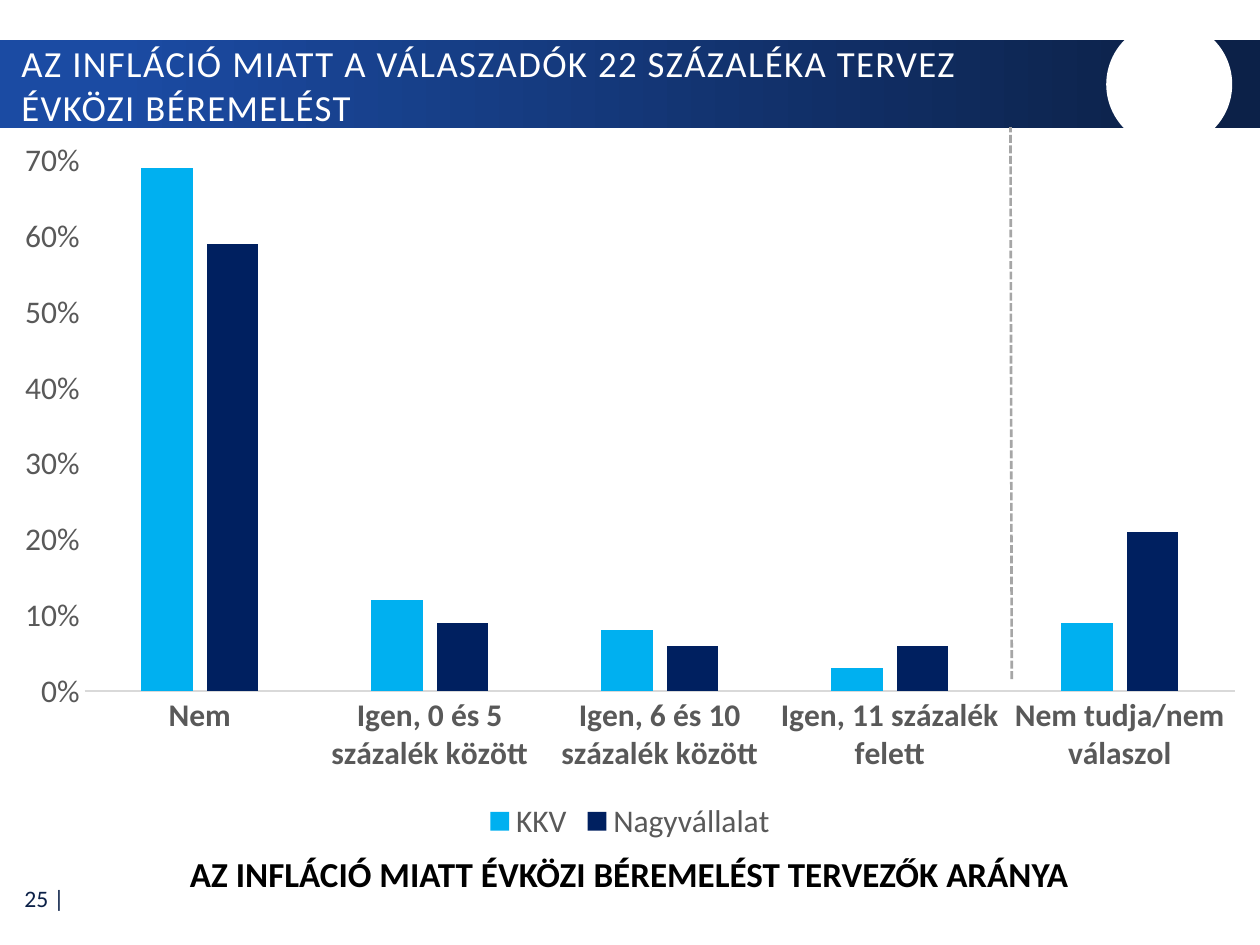
import pptx
import pptx.chart.data
import pptx.dml.color
import pptx.enum.chart
import pptx.enum.dml
import pptx.enum.shapes
import pptx.enum.text
import pptx.oxml.ns
import pptx.util
import lxml.etree

RGBColor = pptx.dml.color.RGBColor
WHITE = RGBColor(0xFF, 0xFF, 0xFF)
BLACK = RGBColor(0, 0, 0)
ROYAL = RGBColor(0x1B, 0x4B, 0xA3)
NAVY = RGBColor(0x0C, 0x21, 0x48)
SKY = RGBColor(0x00, 0xB0, 0xF0)
DEEP_BLUE = RGBColor(0x00, 0x20, 0x60)
TEXT_GREY = RGBColor(0x59, 0x59, 0x59)
DASH_GREY = RGBColor(0xA6, 0xA6, 0xA6)
AXIS_GREY = RGBColor(0xD9, 0xD9, 0xD9)
FONT = "Calibri"
Align = pptx.enum.text.PP_ALIGN
Anchor = pptx.enum.text.MSO_ANCHOR
Shape = pptx.enum.shapes.MSO_SHAPE

deck = pptx.Presentation()
deck.slide_width = pptx.util.Inches(10)
deck.slide_height = pptx.util.Inches(7.5)
page = deck.slides.add_slide(deck.slide_layouts[5])
column = deck.slide_width / 100
row = deck.slide_height / 75


def grid(left, top, width, height):
    return [round(length) for length in (left * column, top * row, width * column, height * row)]


def style(font, size, color, bold=False):
    font.name = FONT
    font.size = pptx.util.Pt(size)
    font.color.rgb = color
    font.bold = bold


band = page.shapes.add_shape(Shape.RECTANGLE, *grid(0, 3.2, 100, 7))
band.fill.gradient()
band.fill.gradient_angle = 0
for stop, position, color in zip(band.fill.gradient_stops, (0.09, 0.95), (ROYAL, NAVY)):
    stop.position = position
    stop.color.rgb = color

disc = page.shapes.add_shape(Shape.OVAL, *grid(87.8, 1.7, 10, 10))
disc.fill.solid()
disc.fill.fore_color.rgb = WHITE
for shape in (band, disc):
    shape.shadow.inherit = False
    shape.line.fill.background()

title = page.shapes.title
page.shapes._spTree.append(title._element)
title.left, title.top, title.width, title.height = grid(0.7, 3.4, 84.9, 6.7)
number = page.shapes.add_textbox(*grid(0.1, 69.4, 6, 3.7))
caption = page.shapes.add_textbox(*grid(7.5, 67.2, 84.9, 4.4))

for box, text, size, color, bold, align, anchor in (
    (title, "AZ INFLÁCIÓ MIATT A VÁLASZADÓK 22 SZÁZALÉKA TERVEZ ÉVKÖZI BÉREMELÉST",
     21, WHITE, False, Align.LEFT, Anchor.MIDDLE),
    (number, "25 |", 13.5, NAVY, False, Align.RIGHT, Anchor.MIDDLE),
    (caption, "AZ INFLÁCIÓ MIATT ÉVKÖZI BÉREMELÉST TERVEZŐK ARÁNYA",
     20, BLACK, True, Align.CENTER, Anchor.TOP),
):
    frame = box.text_frame
    frame.text = text
    frame.word_wrap = True
    frame.auto_size = pptx.enum.text.MSO_AUTO_SIZE.NONE
    frame.vertical_anchor = anchor
    para = frame.paragraphs[0]
    para.alignment = align
    style(para.font, size, color, bold)
title.text_frame.paragraphs[0].runs[0]._r.get_or_add_rPr().set("spc", "80")

divider = page.shapes.add_connector(
    pptx.enum.shapes.MSO_CONNECTOR.STRAIGHT, *grid(80.3, 53.9, 80.2, 10.1))
divider.line.color.rgb = DASH_GREY
divider.line.width = pptx.util.Pt(1.5)
divider.line.dash_style = pptx.enum.dml.MSO_LINE.SQUARE_DOT
lxml.etree.SubElement(divider._element.spPr, pptx.oxml.ns.qn("a:effectLst"))

data = pptx.chart.data.CategoryChartData(number_format="0%")
data.categories = ["Nem", "Igen, 0 és 5 százalék között", "Igen, 6 és 10 százalék között",
                   "Igen, 11 százalék felett", "Nem tudja/nem válaszol"]
data.add_series("KKV", (0.69, 0.12, 0.08, 0.03, 0.09))
data.add_series("Nagyvállalat", (0.59, 0.09, 0.06, 0.06, 0.21))
chart = page.shapes.add_chart(
    pptx.enum.chart.XL_CHART_TYPE.COLUMN_CLUSTERED, *grid(0, 10.1, 100, 57.1), data).chart
style(chart.font, 18, BLACK)
chart.has_title = False
chart.has_legend = True
chart.legend.position = pptx.enum.chart.XL_LEGEND_POSITION.BOTTOM
chart.legend.include_in_layout = False
style(chart.legend.font, 18, TEXT_GREY)

plot = chart.plots[0]
plot.gap_width = 219
plot.overlap = -27
plot.vary_by_categories = False
for series, color in zip(plot.series, (SKY, DEEP_BLUE)):
    series.format.fill.solid()
    series.format.fill.fore_color.rgb = color

for axis, bold in ((chart.category_axis, True), (chart.value_axis, False)):
    axis.has_major_gridlines = False
    axis.major_tick_mark = pptx.enum.chart.XL_TICK_MARK.NONE
    axis.minor_tick_mark = pptx.enum.chart.XL_TICK_MARK.NONE
    style(axis.tick_labels.font, 18, TEXT_GREY, bold)
chart.category_axis.format.line.color.rgb = AXIS_GREY
chart.category_axis.format.line.width = pptx.util.Pt(0.75)
chart.value_axis.format.line.fill.background()
chart.value_axis.minimum_scale = 0
chart.value_axis.maximum_scale = 0.7
chart.value_axis.major_unit = 0.1
chart.value_axis.tick_labels.number_format = "0%"
chart.value_axis.tick_labels.number_format_is_linked = False

deck.save("out.pptx")
